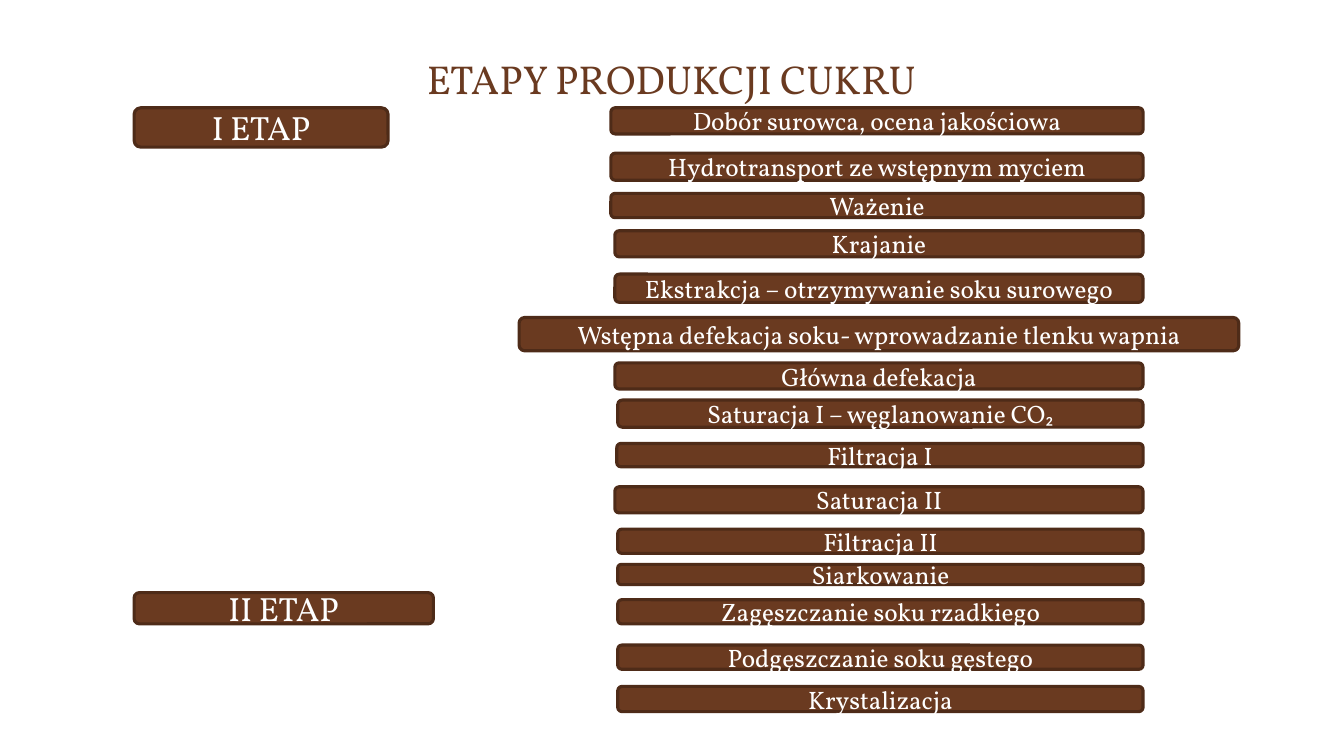
from dataclasses import dataclass

from pptx import Presentation
from pptx import util as u
from pptx.dml import color
from pptx.enum import shapes, text


@dataclass(frozen=True)
class Theme:
    """Colours, fonts and type sizes of the slide."""
    brown: color.RGBColor = color.RGBColor(0x6A, 0x3A, 0x20)
    edge: color.RGBColor = color.RGBColor(0x4E, 0x2B, 0x18)
    white: color.RGBColor = color.RGBColor(0xFF, 0xFF, 0xFF)
    font: str = "Vollkorn"
    subscript_font: str = "Calibri"
    title_size: float = 28.8
    stage_size: float = 24
    step_size: float = 18
    line_width: float = 2.25


THEME = Theme()

STAGES = [
    ("I ETAP", 0, 181.4, 28.1),
    ("II ETAP", 346.3, 213.8, 22.3),
]

STEPS = [
    ("Dobór surowca, ocena jakościowa", 0, 0, 0, 18.7),
    ("Hydrotransport ze wstępnym myciem", 0, 0, 32.4, 19.4),
    ("Ważenie", 0, 0, 61.2, 17.3),
    ("Krajanie", 2.9, 0, 87.8, 18.7),
    ("Ekstrakcja – otrzymywanie soku surowego", 2.9, 0, 118.8, 20.2),
    ("Wstępna defekacja soku- wprowadzanie tlenku wapnia", -65.5, -68.4, 149.8, 23.8),
    ("Główna defekacja", 2.9, 0, 182.2, 18.7),
    ("Saturacja I – węglanowanie CO₂", 5, 0, 208.8, 19.4),
    ("Filtracja I", 4.3, 0, 239.8, 16.6),
    ("Saturacja II", 2.9, 0, 270.7, 18.7),
    ("Filtracja II", 5, 0, 301, 17.3),
    ("Siarkowanie", 5, 0, 326.2, 14.4),
    ("Zagęszczanie soku rzadkiego", 5, 0, 351.4, 17.3),
    ("Podgęszczanie soku gęstego", 5, 0, 383.8, 17.3),
    ("Krystalizacja", 5, 0, 413.3, 18),
]


def style_paragraph(paragraph, size, colour):
    """Centre a paragraph and set its type."""
    paragraph.alignment = text.PP_ALIGN.CENTER
    paragraph.font.name = THEME.font
    paragraph.font.size = u.Pt(size)
    paragraph.font.bold = False
    paragraph.font.color.rgb = colour


def add_title(slide, title, left, top, width, height):
    """Place the slide title in the given box."""
    placeholder = slide.shapes.title
    placeholder.left, placeholder.top = u.Pt(left), u.Pt(top)
    placeholder.width, placeholder.height = u.Pt(width), u.Pt(height)
    frame = placeholder.text_frame
    frame.text = title
    frame.auto_size = text.MSO_AUTO_SIZE.NONE
    frame.vertical_anchor = text.MSO_ANCHOR.BOTTOM
    style_paragraph(frame.paragraphs[0], THEME.title_size, THEME.brown)


def add_bar(slide, label, size, left, top, width, height):
    """Draw one rounded bar with a centred label."""
    bar = slide.shapes.add_shape(
        shapes.MSO_SHAPE.ROUNDED_RECTANGLE,
        u.Pt(left), u.Pt(top), u.Pt(width), u.Pt(height))
    bar.shadow.inherit = False
    bar.fill.solid()
    bar.fill.fore_color.rgb = THEME.brown
    bar.line.color.rgb = THEME.edge
    bar.line.width = u.Pt(THEME.line_width)
    frame = bar.text_frame
    frame.word_wrap = True
    frame.vertical_anchor = text.MSO_ANCHOR.MIDDLE
    paragraph = frame.paragraphs[0]
    style_paragraph(paragraph, size, THEME.white)
    body, subscript, _ = label.partition("₂")
    paragraph.add_run().text = body
    if subscript:
        run = paragraph.add_run()
        run.text = subscript
        run.font.name = THEME.subscript_font


def add_stages(slide, left, top):
    """Place the stage headings down the left column."""
    for label, offset, width, height in STAGES:
        add_bar(slide, label, THEME.stage_size, left, top + offset, width, height)


def add_steps(slide, left, top, width):
    """Place the production steps down the right column."""
    for label, left_inset, right_inset, offset, height in STEPS:
        add_bar(slide, label, THEME.step_size, left + left_inset, top + offset,
                width - left_inset - right_inset, height)


def main():
    """Build and save the presentation."""
    presentation = Presentation()
    presentation.slide_width, presentation.slide_height = u.Pt(960), u.Pt(540)
    slide = presentation.slides.add_slide(presentation.slide_layouts[5])
    add_title(slide, "ETAPY PRODUKCJI CUKRU", 95.8, 33.8, 767.5, 43.2)
    add_stages(slide, 95.8, 77)
    add_steps(slide, 436.3, 77, 380.2)
    presentation.save("out.pptx")


if __name__ == "__main__":
    main()
